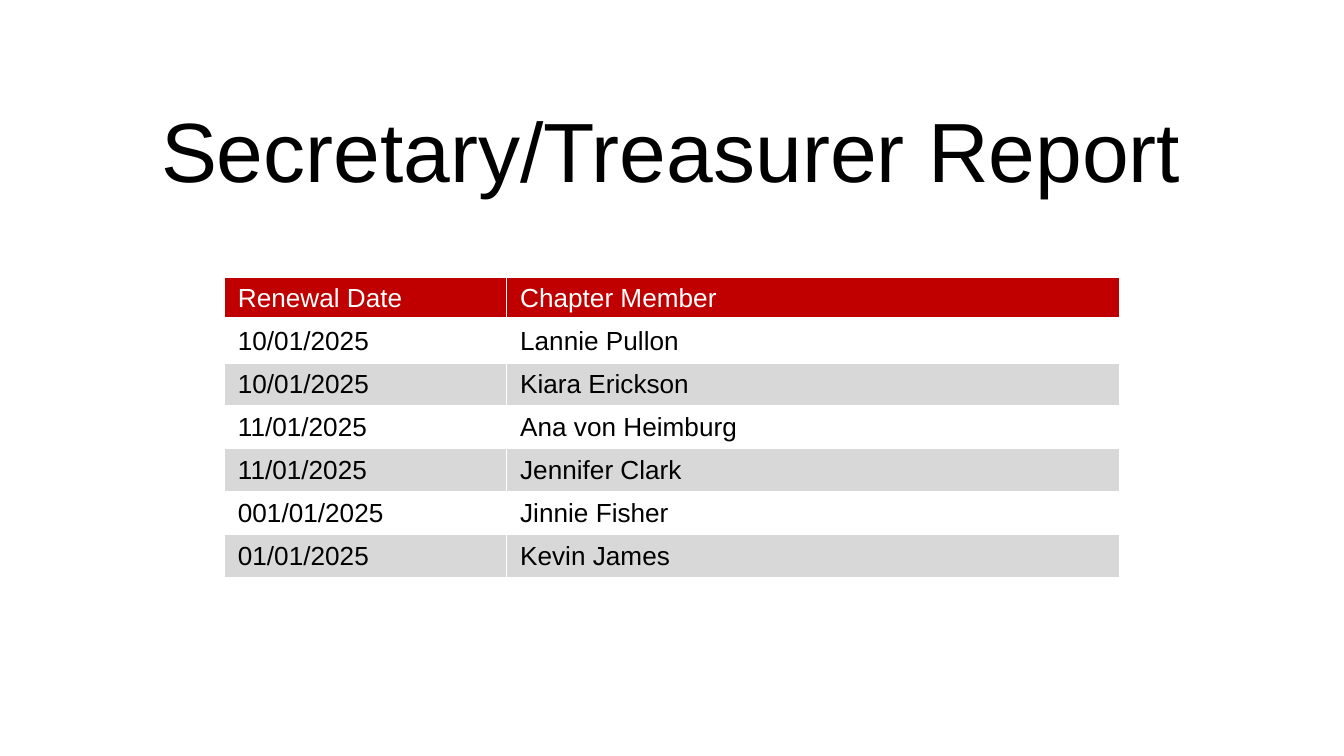
"""Build the Secretary/Treasurer Report slide with its renewal table."""
from lxml import etree
from pptx import Presentation, util as u
from pptx.dml.color import RGBColor
from pptx.enum import text
from pptx.oxml import ns

COLORS = {"ink": "000000", "paper": "FFFFFF", "header": "C00000", "band": "D8D8D8"}
FONT = "Arial"
ROWS = [
    ("Renewal Date", "Chapter Member"),
    ("10/01/2025", "Lannie Pullon"),
    ("10/01/2025", "Kiara Erickson"),
    ("11/01/2025", "Ana von Heimburg"),
    ("11/01/2025", "Jennifer Clark"),
    ("001/01/2025", "Jinnie Fisher"),
    ("01/01/2025", "Kevin James"),
]


def write_text(frame, content, size=14, color="ink", align=text.PP_ALIGN.LEFT, spacing=1.0):
    paragraph = frame.paragraphs[0]
    paragraph.alignment = align
    paragraph.line_spacing = spacing
    run = paragraph.add_run()
    run.text = content
    run.font.name = FONT
    run.font.size = u.Pt(size)
    run.font.bold = False
    run.font.color.rgb = RGBColor.from_string(COLORS[color])


def set_borders(cell, widths):
    properties = cell._tc.get_or_add_tcPr()
    for side, width in zip("LRTB", widths):
        line = etree.SubElement(properties, ns.qn(f"a:ln{side}"), w=str(u.Pt(width)))
        fill = etree.SubElement(line, ns.qn("a:solidFill"))
        etree.SubElement(fill, ns.qn("a:srgbClr"), val=COLORS["paper"])


class ReportSlide:
    def __init__(self, presentation):
        self.slide = presentation.slides.add_slide(presentation.slide_layouts[5])

    def title(self, content, left, top, width, height):
        shape = self.slide.shapes.title
        shape.left, shape.top = u.Inches(left), u.Inches(top)
        shape.width, shape.height = u.Inches(width), u.Inches(height)
        frame = shape.text_frame
        frame.word_wrap = True
        frame.auto_size = text.MSO_AUTO_SIZE.NONE
        frame.vertical_anchor = text.MSO_ANCHOR.BOTTOM
        frame.margin_left = frame.margin_right = u.Inches(0.07)
        frame.margin_top = frame.margin_bottom = u.Inches(0.04)
        write_text(frame, content, size=45, align=text.PP_ALIGN.CENTER, spacing=0.9)

    def table(self, rows, left, top, column_widths, row_height):
        shape = self.slide.shapes.add_table(
            len(rows), len(column_widths), u.Inches(left), u.Inches(top),
            u.Inches(sum(column_widths)), u.Inches(row_height * len(rows)))
        table = shape.table
        for column, width in zip(table.columns, column_widths):
            column.width = u.Inches(width)
        for index, values in enumerate(rows):
            table.rows[index].height = u.Inches(row_height)
            for cell, value in zip(table.rows[index].cells, values):
                self.cell(cell, value, index)

    def cell(self, cell, value, row):
        set_borders(cell, (1, 1, 3 if row == 1 else 1, 3 if row == 0 else 1))
        background = "header" if row == 0 else ("band", "paper")[row % 2]
        cell.fill.solid()
        cell.fill.fore_color.rgb = RGBColor.from_string(COLORS[background])
        cell.margin_left = cell.margin_right = u.Inches(0.1)
        cell.margin_top, cell.margin_bottom = u.Inches(0.05), u.Inches(0.04)
        write_text(cell.text_frame, value, color="paper" if row == 0 else "ink")


def main():
    presentation = Presentation()
    presentation.slide_width = u.Inches(10)
    presentation.slide_height = presentation.slide_width * 9 // 16
    report = ReportSlide(presentation)
    report.title("Secretary/Treasurer Report", 0.68, 0.73, 8.62, 0.8)
    report.table(ROWS, 1.67, 2.06, (2.1, 4.56), 0.32)
    presentation.save("out.pptx")


if __name__ == "__main__":
    main()
